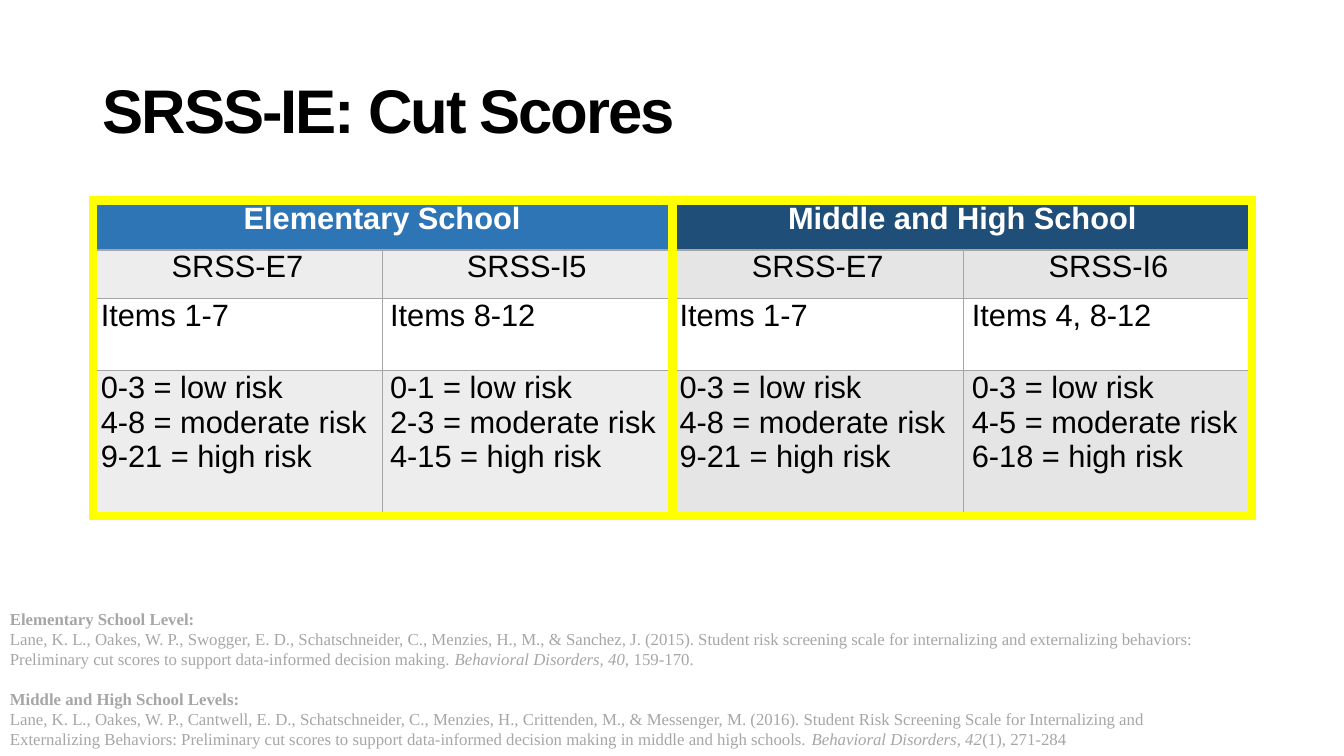
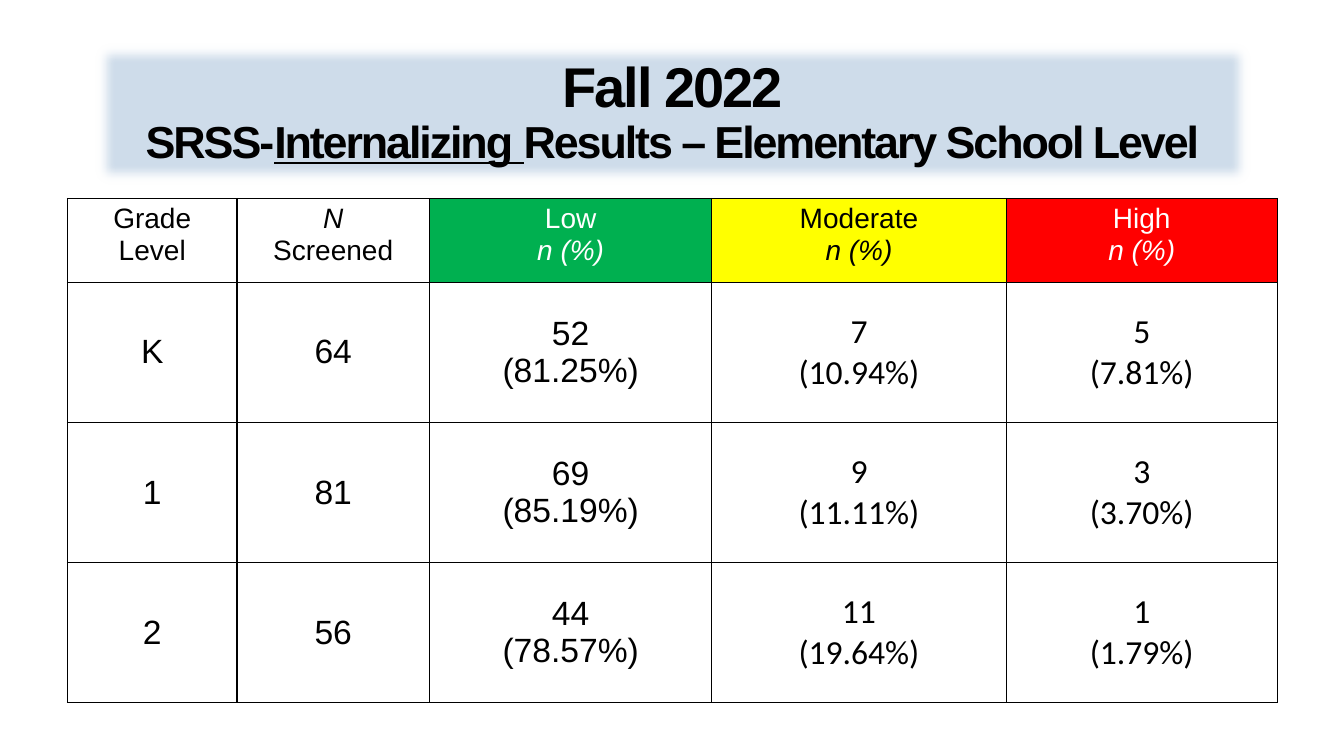
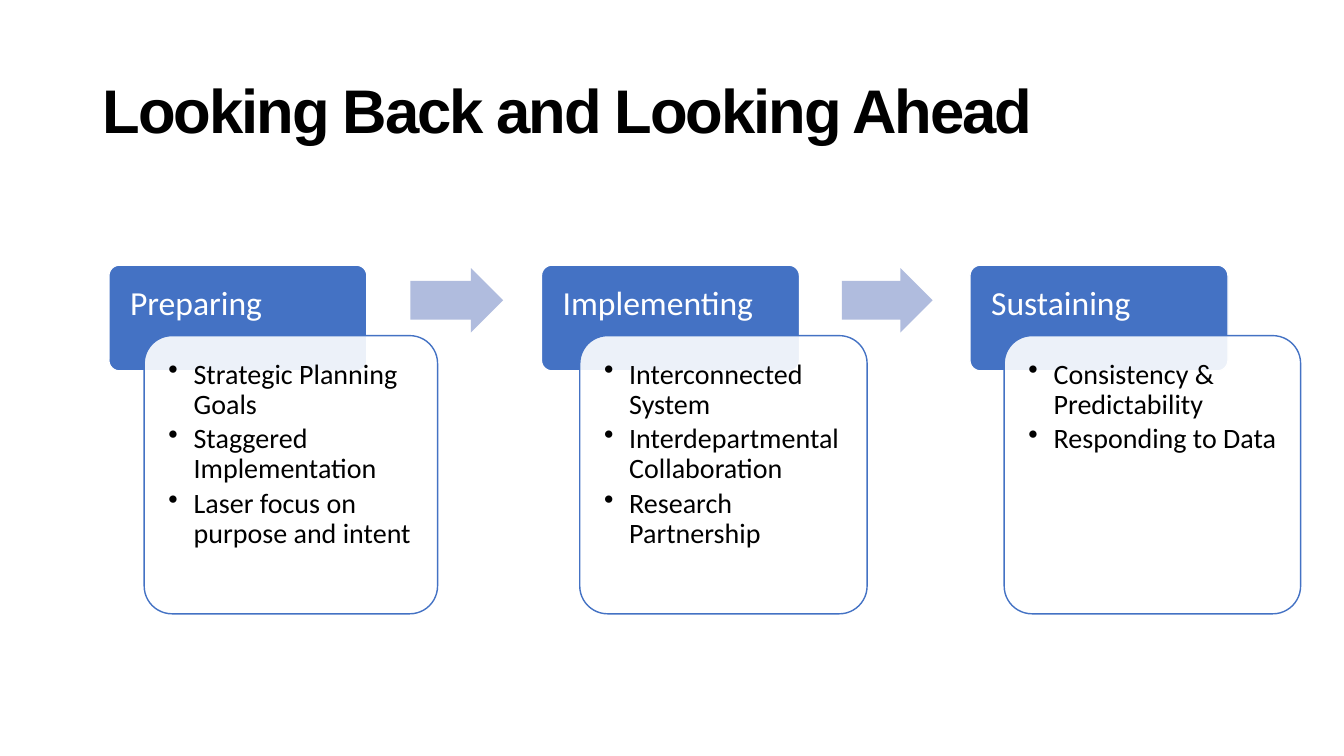
from pptx import Presentation, util as u
from pptx.dml.color import RGBColor
from pptx.enum import shapes, text
from pptx.oxml import ns, xmlchemy as xc
from lxml import etree

THEME = {
    "ink": "000000", "white": "FFFFFF", "grey": "A5A5A5", "note": "A6A6A6",
    "sky": "2E75B6", "navy": "1F4E79", "pale": "EDEDED", "dim": "E5E5E5",
    "gold": "FFFF00", "green": "00B050", "red": "FF0000",
    "band": "CEDCEA", "blue": "4472C4", "arrow": "B0BCDE",
    "title": {"size": 44, "name": "Arial", "bold": True, "color": "ink", "spc": -150},
    "cell": {"size": 22, "name": "Arial", "color": "ink"},
    "head": {"size": 20, "name": "Arial", "color": "ink"},
    "count": {"size": 24, "name": "Arial", "color": "ink"},
    "cite": {"size": 12, "name": "Times New Roman", "color": "note"},
    "stage": {"size": 24, "name": "Calibri", "color": "white"},
    "point": {"size": 20, "name": "Calibri", "color": "ink"},
}
BOLD, ITAL = {"bold": True}, {"italic": True}
MID, TOP = text.MSO_ANCHOR.MIDDLE, text.MSO_ANCHOR.TOP
LEFT, CENTER = text.PP_ALIGN.LEFT, text.PP_ALIGN.CENTER
KIND = shapes.MSO_SHAPE
BANNER = (0.92, 0.4, 11.5, 1.45)

LEVELS = [("Elementary School", "sky"), ("Middle and High School", "navy")]
SCALES = ["SRSS-E7", "SRSS-I5", "SRSS-E7", "SRSS-I6"]
ITEMS = ["Items 1-7", "Items 8-12", "Items 1-7", "Items 4, 8-12"]
CUTS = [("0-3", "4-8", "9-21"), ("0-1", "2-3", "4-15"),
        ("0-3", "4-8", "9-21"), ("0-3", "4-5", "6-18")]
RISKS = ["low", "moderate", "high"]
CITES = [
    [("Elementary School Level:", BOLD)],
    ["Lane, K. L., Oakes, W. P., Swogger, E. D., Schatschneider, C., Menzies, H., M., & Sanchez, J. (2015). "
     "Student risk screening scale for internalizing and externalizing behaviors: Preliminary cut scores "
     "to support data-informed decision making. ", ("Behavioral Disorders, 40,", ITAL), " 159-170."],
    [("Middle and High School Levels:", BOLD)],
    ["Lane, K. L., Oakes, W. P., Cantwell, E. D., Schatschneider, C., Menzies, H., Crittenden, M., & Messenger, M. "
     "(2016). Student Risk Screening Scale for Internalizing and Externalizing Behaviors: Preliminary cut scores "
     "to support data-informed decision making in middle and high schools. ",
     ("Behavioral Disorders, 42", ITAL), "(1), 271-284"],
]

SMALL = {"size": 32}
FALL = [[("Fall 2022", {"size": 40}), "\n", ("SRSS-", SMALL),
         ("Internalizing ", {"size": 32, "underline": True}),
         ("Results – Elementary School Level", SMALL)]]
HEADS = [
    ([["Grade Level"]], "white", "ink"),
    ([[("N", ITAL)], ["Screened"]], "white", "ink"),
    ([["Low"], [("n (%)", ITAL)]], "green", "white"),
    ([["Moderate"], [("n (%)", ITAL)]], "gold", "ink"),
    ([["High"], [("n (%)", ITAL)]], "red", "white"),
]
GRADES = [("K", 64, (52, 7, 5)), ("1", 81, (69, 9, 3)), ("2", 56, (44, 11, 1))]

STAGES = [
    ("Preparing", 1.08, 1.43, 2.91,
     ["Strategic Planning Goals", "Staggered Implementation", "Laser focus on purpose and intent"]),
    ("Implementing", 5.37, 5.75, 2.85,
     ["Interconnected System", "Interdepartmental Collaboration", "Research Partnership"]),
    ("Sustaining", 9.62, 9.96, 2.94,
     ["Consistency & Predictability", "Responding to Data"]),
]
ARROWS = [(4.07, 0.92), (8.35, 0.9)]


def rgb(key):
    return RGBColor.from_string(THEME[key])


def node(parent, tag, **attrs):
    return etree.SubElement(parent, ns.qn(tag), attrs)


def paint(fill, key):
    if key:
        fill.solid()
        fill.fore_color.rgb = rgb(key)
    else:
        fill.background()


def style(run, form):
    for key, val in form.items():
        if key == "color":
            run.font.color.rgb = rgb(val)
        elif key == "spc":
            run.font._element.set("spc", str(val))
        else:
            setattr(run.font, key, u.Pt(val) if key == "size" else val)


def write(frame, paras, base, align=LEFT, **form):
    for i, runs in enumerate(paras):
        para = frame.paragraphs[0] if i == 0 else frame.add_paragraph()
        for key, val in {"alignment": align, **form}.items():
            setattr(para, key, val)
        for part in runs:
            if part == "\n":
                para.add_line_break()
                continue
            words, extra = (part, {}) if isinstance(part, str) else part
            run = para.add_run()
            run.text = words
            style(run, {**base, **extra})


def setup(frame, anchor=TOP, pad=(0.1, 0.05, 0.1, 0.05)):
    frame.word_wrap = True
    frame.vertical_anchor = anchor
    for side, gap in zip(("left", "top", "right", "bottom"), pad):
        setattr(frame, "margin_" + side, u.Inches(gap))
    return frame


def box(slide, at):
    return slide.shapes.add_textbox(*map(u.Inches, at))


def draw(slide, kind, at, fill=None, line=None, width=1, adj=()):
    shape = slide.shapes.add_shape(kind, *map(u.Inches, at))
    shape.shadow.inherit = False
    paint(shape.fill, fill)
    paint(shape.line.fill, line)
    if line:
        shape.line.width = u.Pt(width)
        node(shape.element.spPr.find(ns.qn("a:ln")), "a:miter", lim="800000")
    for i, val in enumerate(adj):
        shape.adjustments[i] = val
    return shape


def title(shape, paras, align=LEFT):
    write(setup(shape.text_frame, MID), paras, THEME["title"], align, line_spacing=0.9)


def grid(slide, at, cols, rows):
    table = slide.shapes.add_table(len(rows), len(cols), *map(u.Inches, at)).table
    table.first_row = table.horz_banding = False
    for col, wide in zip(table.columns, cols):
        col.width = u.Inches(wide)
    for row, high in zip(table.rows, rows):
        row.height = u.Inches(high)
    return table


def edge(cell, key, top=1, bottom=1):
    props = cell._tc.get_or_add_tcPr()
    for i, (side, width) in enumerate(zip("LRTB", (1, 1, top, bottom))):
        line = etree.Element(ns.qn("a:ln" + side), w=str(u.Pt(width)))
        node(node(line, "a:solidFill"), "a:srgbClr", val=THEME[key])
        props.insert(i, line)


def scores(slide):
    title(box(slide, BANNER), [["SRSS-IE: Cut Scores"]])
    frame = setup(box(slide, (0, 5.99, 12.14, 1.51)).text_frame)
    write(frame, CITES, THEME["cite"])
    frame.paragraphs[2].space_before = u.Pt(14)

    table = grid(slide, (0.92, 2, 11.5, 3.12), (2.87, 2.87, 2.9, 2.87), (0.48, 0.48, 0.72, 1.44))
    tops = [None] * 4
    for i, (name, _) in enumerate(LEVELS):
        table.cell(0, 2 * i).merge(table.cell(0, 2 * i + 1))
        tops[2 * i] = name
    cuts = ["\n".join(f"{cut} = {risk} risk" for cut, risk in zip(col, RISKS)) for col in CUTS]
    for r, row in enumerate((tops, SCALES, ITEMS, cuts)):
        for c, words in enumerate(row):
            cell = table.cell(r, c)
            shade = LEVELS[c // 2][1] if r == 0 else "white" if r == 2 else ("pale", "dim")[c // 2]
            paint(cell.fill, shade)
            edge(cell, "grey", 2 if r == 1 else 1, 2 if r == 0 else 1)
            setup_cell(cell, TOP, (0.08, 0, 0.08, 0))
            if words:
                look = {"bold": True, "color": "white"} if r == 0 else {}
                write(cell.text_frame, [[line] for line in words.split("\n")],
                      {**THEME["cell"], **look}, CENTER if r < 2 else LEFT)
    for left in (6.67, 0.92):
        draw(slide, KIND.RECTANGLE, (left, 1.99, 5.75, 3.13), line="gold", width=6)


def setup_cell(cell, anchor, pad):
    cell.vertical_anchor = anchor
    for side, gap in zip(("left", "top", "right", "bottom"), pad):
        setattr(cell, "margin_" + side, u.Inches(gap))


def results(slide):
    band = draw(slide, KIND.RECTANGLE, BANNER, fill="band")
    node(band.element.spPr.find(ns.qn("a:effectLst")), "a:softEdge", rad="112500")
    title(band, FALL, CENTER)

    table = grid(slide, (0.67, 1.97, 12, 5), (1.68, 1.91, 2.8, 2.92, 2.69), (0.83, 1.39, 1.39, 1.39))
    rows = [HEADS]
    for grade, total, counts in GRADES:
        cells = [[[grade]], [[str(total)]]]
        cells += [[[str(n)], [f"({n / total:.2%})"]] for n in counts]
        rows.append([(paras, "white", "ink") for paras in cells])
    for r, row in enumerate(rows):
        for c, (paras, fill, ink) in enumerate(row):
            cell = table.cell(r, c)
            paint(cell.fill, fill)
            edge(cell, "ink")
            setup_cell(cell, MID if r else TOP, (0.1, 0.05, 0.1, 0.05))
            look = {"color": ink}
            if r and c > 2:
                look["name"] = "Calibri"
            write(cell.text_frame, paras, {**THEME["count" if r else "head"], **look}, CENTER)


def bullet(para):
    props = para._p.get_or_add_pPr()
    props.set("marL", str(u.Inches(0.25)))
    props.set("indent", str(-u.Inches(0.25)))
    node(props, "a:buChar", char="•")


def stages(slide):
    title(box(slide, BANNER), [["Looking Back and Looking Ahead"]])
    for name, left, inner, wide, points in STAGES:
        tab = draw(slide, KIND.ROUNDED_RECTANGLE, (left, 2.63, 2.56, 1.05), "blue", "white", adj=[0.1])
        write(setup(tab.text_frame, TOP, (0.18,) * 4), [[name]], THEME["stage"], line_spacing=0.9)
        card = draw(slide, KIND.ROUNDED_RECTANGLE, (inner, 3.33, wide, 2.76), "white", "blue", adj=[0.1])
        node(card.element.spPr.find(ns.qn("a:solidFill"))[0], "a:alpha", val="90000")
        frame = setup(card.text_frame, TOP, (0.16,) * 4)
        write(frame, [[point] for point in points], THEME["point"], line_spacing=0.9, space_after=u.Pt(3))
        for para in frame.paragraphs:
            bullet(para)
    for left, wide in ARROWS:
        draw(slide, KIND.RIGHT_ARROW, (left, 2.66, wide, 0.64), "arrow", adj=(0.6, 0.5))


def main():
    deck = Presentation()
    deck.slide_width, deck.slide_height = u.Inches(13.33), u.Inches(7.5)
    for build in (scores, results, stages):
        build(deck.slides.add_slide(deck.slide_layouts[6]))
    deck.save("out.pptx")


if __name__ == "__main__":
    main()
